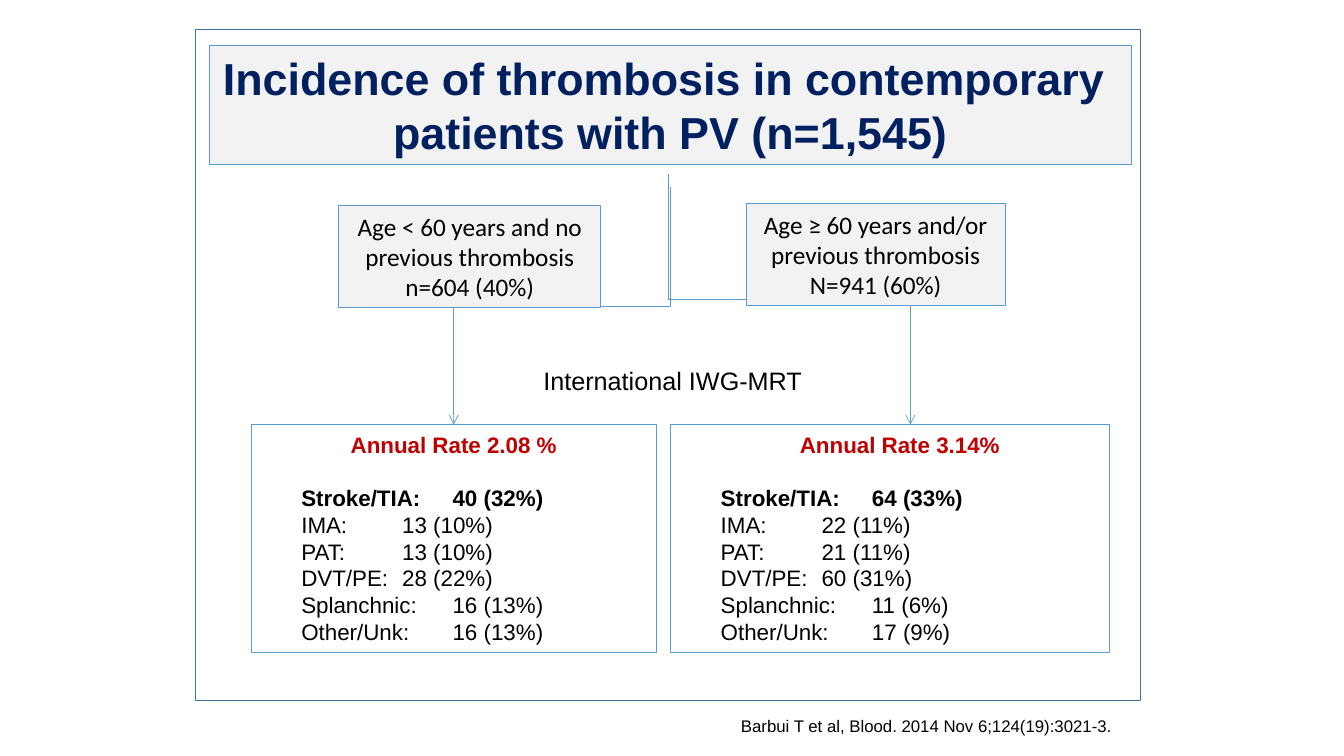
import pptx
import pptx.util
import pptx.dml.color
import pptx.enum.shapes
import pptx.enum.text
import pptx.oxml.ns
from lxml import etree

Inches = pptx.util.Inches
Pt = pptx.util.Pt
RGB = pptx.dml.color.RGBColor
qn = pptx.oxml.ns.qn
CENTER = pptx.enum.text.PP_ALIGN.CENTER
MIDDLE = pptx.enum.text.MSO_ANCHOR.MIDDLE

BLACK = RGB(0, 0, 0)
WHITE = RGB(255, 255, 255)
GRAY = RGB(0xF2, 0xF2, 0xF2)
BLUE = RGB(0x5B, 0x9B, 0xD5)
STEEL = RGB(0x43, 0x73, 0x9E)
NAVY = RGB(0x00, 0x20, 0x60)
RED = RGB(0xC0, 0x00, 0x00)

NAMES = ["Stroke/TIA:\t", "IMA:\t\t", "PAT:\t\t", "DVT/PE:\t",
         "Splanchnic:\t", "Other/Unk:\t"]
# Each group: age box, age lines, rate box, heading, heading indent, values,
# start and end of its arrow
GROUPS = [
    ((3.36, 2.04, 2.6, 1.01),
     ["Age < 60 years and no previous thrombosis", "n=604 (40%)"],
     (2.49, 4.21, 4.02, 2.26), "Annual Rate 2.08 %", 0,
     ["40 (32%)", "13 (10%)", "13 (10%)", "28 (22%)", "16 (13%)", "16 (13%)"],
     (6.65, 1.86), (4.5, 4.21)),
    ((7.4, 2.02, 2.57, 1.01),
     ["Age ≥ 60 years and/or previous thrombosis", "N=941 (60%)"],
     (6.65, 4.21, 4.35, 2.26), "Annual Rate 3.14%", 0.2,
     ["64 (33%)", "22 (11%)", "21 (11%)", "60 (31%)", "11 (6%)", "17 (9%)"],
     (6.63, 1.73), (9.03, 4.21)),
]


def style(para, size, face="Arial", color=BLACK, bold=False, align=None):
    font = para.font
    font.size, font.name, font.bold = Pt(size), face, bold
    font.color.rgb = color
    para.alignment = align or pptx.enum.text.PP_ALIGN.LEFT


def indent(para, left):
    props = para._p.get_or_add_pPr()
    props.set("marL", str(Inches(left)))
    props.set("indent", "0")


def write(frame, lines):
    """Fill a text frame with one paragraph per line and return them."""
    frame.text = "\n".join(lines)
    return frame.paragraphs


def panel(slide, box, fill=None, color=BLUE, width=0.75):
    shape = slide.shapes.add_shape(
        pptx.enum.shapes.MSO_SHAPE.RECTANGLE, *map(Inches, box))
    shape.shadow.inherit = False
    if fill is None:
        shape.fill.background()
    else:
        shape.fill.solid()
        shape.fill.fore_color.rgb = fill
    shape.line.color.rgb = color
    shape.line.width = Pt(width)
    shape.text_frame.word_wrap = True
    return shape


def heading(slide, box):
    title = slide.shapes.title
    title.left, title.top, title.width, title.height = map(Inches, box)
    title.fill.solid()
    title.fill.fore_color.rgb = GRAY
    title.line.color.rgb = BLUE
    title.line.width = Pt(0.75)
    frame = title.text_frame
    for para in write(frame, ["Incidence of thrombosis in contemporary ",
                              "patients with PV (n=1,545)"]):
        style(para, 32, color=NAVY, bold=True, align=CENTER)
    frame.word_wrap = False
    frame.auto_size = pptx.enum.text.MSO_AUTO_SIZE.NONE
    frame.vertical_anchor = MIDDLE


def rates(slide, box, head, shift, values):
    shape = panel(slide, box, WHITE)
    rows = [name + value for name, value in zip(NAMES, values)]
    first, *rest = write(shape.text_frame, [head] + rows)
    style(first, 16, color=RED, bold=True, align=CENTER)
    indent(first, shift)
    first.space_after = Pt(18.4)
    for para in rest:
        style(para, 16, bold=para is rest[0])
        indent(para, 0.4)


def ages(slide, box, lines):
    shape = panel(slide, box, GRAY)
    for para in write(shape.text_frame, lines):
        style(para, 18, "Calibri", align=CENTER)


def arrow(slide, start, end):
    """Elbow that leaves downwards: a turned box around the same centre."""
    (x1, y1), (x2, y2) = start, end
    wide, high = y2 - y1, abs(x2 - x1)
    left, top = (x1 + x2 - wide) / 2, (y1 + y2 - high) / 2
    line = slide.shapes.add_connector(
        pptx.enum.shapes.MSO_CONNECTOR.ELBOW, Inches(left), Inches(top),
        Inches(left + wide), Inches(top + high))
    line.line.color.rgb = BLUE
    line.line.width = Pt(0.5)
    props = line._element.spPr
    form = props.find(qn("a:xfrm"))
    if x2 > x1:
        form.set("rot", str(270 * 60000))
        form.set("flipH", "1")
    else:
        form.set("rot", str(90 * 60000))
    etree.SubElement(props.find(qn("a:ln")), qn("a:tailEnd"), type="arrow")
    etree.SubElement(props, qn("a:effectLst"))


def label(slide, box, text, size):
    frame = slide.shapes.add_textbox(*map(Inches, box)).text_frame
    frame.word_wrap = False
    style(write(frame, [text])[0], size)


def main():
    deck = pptx.Presentation()
    deck.slide_width, deck.slide_height = Inches(13.33), Inches(7.5)
    slide = deck.slides.add_slide(deck.slide_layouts[5])

    # Title and outer frame
    heading(slide, (2.08, 0.45, 9.14, 1.18))
    panel(slide, (1.94, 0.29, 9.37, 6.66), color=STEEL, width=1)

    # The two risk groups, with the age box over its arrow
    for age, lines, rate, head, shift, values, start, end in GROUPS:
        rates(slide, rate, head, shift, values)
        arrow(slide, start, end)
        ages(slide, age, lines)

    # Study name and citation
    label(slide, (5.29, 3.58, 2.79, 0.4), "International IWG-MRT", 18)
    label(slide, (7.25, 7.05, 3.91, 0.3),
          "Barbui T et al, Blood. 2014 Nov 6;124(19):3021-3.", 12)

    deck.save("out.pptx")


if __name__ == "__main__":
    main()
